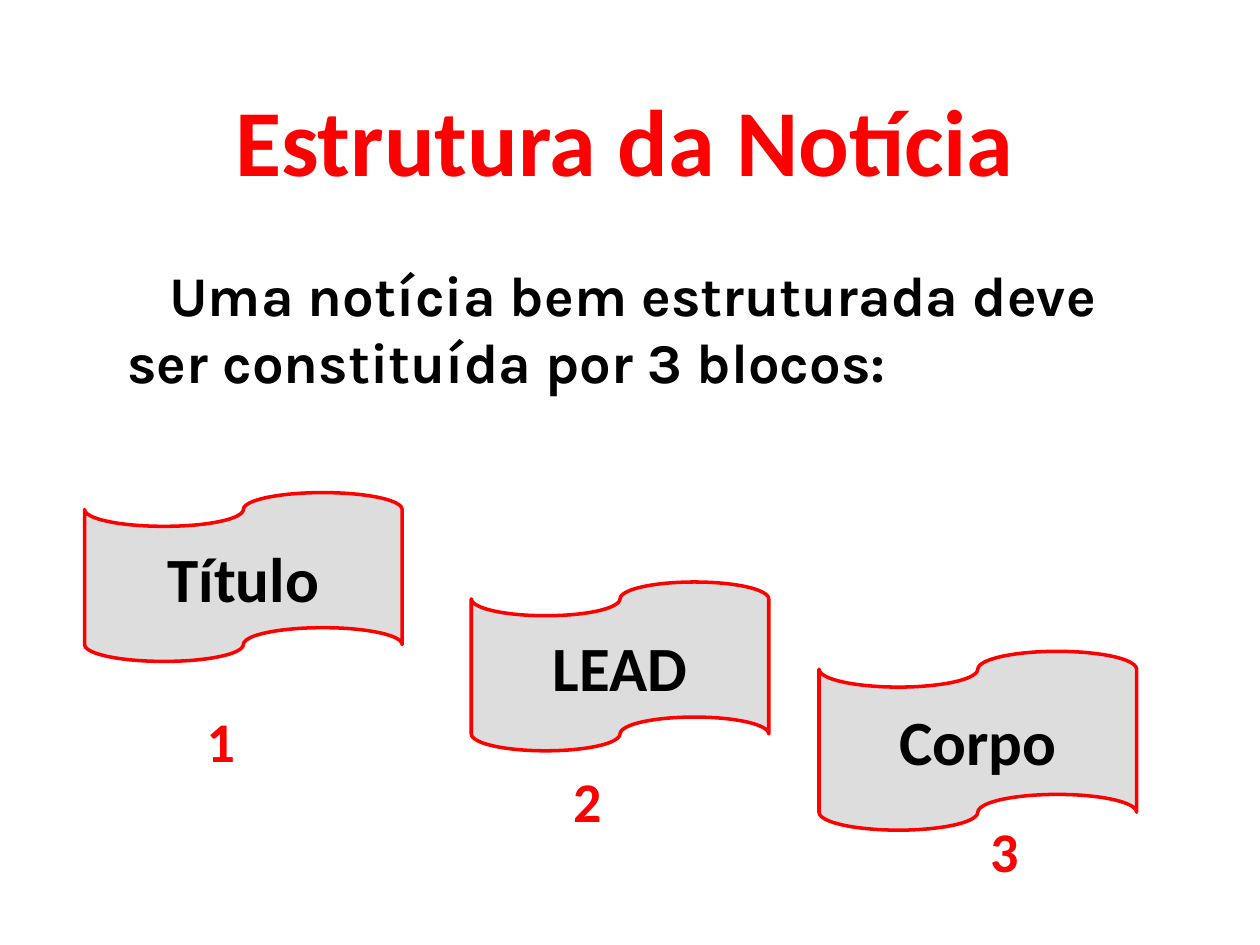
from pptx import Presentation
from pptx.dml.color import RGBColor
from pptx.enum.shapes import MSO_SHAPE
from pptx.enum.text import MSO_ANCHOR, MSO_AUTO_SIZE, PP_ALIGN
from pptx.util import Pt
from lxml import etree

TAPE = MSO_SHAPE.FLOWCHART_PUNCHED_TAPE
TOP, MIDDLE = MSO_ANCHOR.TOP, MSO_ANCHOR.MIDDLE
LEFT, CENTER = PP_ALIGN.LEFT, PP_ALIGN.CENTER
NO_FIT = MSO_AUTO_SIZE.NONE

RED, BLACK, GREY = "FF0000", "000000", "DDDDDD"
DRAWING = "{http://schemas.openxmlformats.org/drawingml/2006/main}"

# Each block: name, tape place (left, top, width, height), number place
BLOCKS = [
    ("Título", (48.3, 281.5, 181.5, 96.5), (111, 400.3, 39.6, 46)),
    ("LEAD", (269.3, 332.6, 170, 96.5), (320.4, 434.2, 39.6, 46)),
    ("Corpo", (468, 372.2, 181.5, 102.2), (558.7, 463, 51.1, 46)),
]


def color(value):
    return RGBColor.from_string(value)


def place(box, left, top, width, height):
    box.left, box.top = Pt(left), Pt(top)
    box.width, box.height = Pt(width), Pt(height)


def write(box, text, size, ink, align=LEFT, anchor=TOP, font="Calibri"):
    frame = box.text_frame
    frame.word_wrap = True
    frame.auto_size = NO_FIT
    frame.vertical_anchor = anchor
    para = frame.paragraphs[0]
    para.text = text
    para.alignment = align
    para.space_before = Pt(0)
    para.font.name = font
    para.font.size = Pt(size)
    para.font.bold = True
    para.font.color.rgb = color(ink)
    return para


def indent_first_line(para, indent):
    """Turn a bulleted paragraph into plain text with a first-line indent."""
    properties = para._p.get_or_add_pPr()
    properties.set("marL", "0")
    properties.set("indent", str(Pt(indent)))
    bullet = etree.Element(DRAWING + "buNone")
    properties.find(DRAWING + "spcBef").addnext(bullet)


def add_tape(page, name, area):
    tape = page.shapes.add_shape(TAPE, *map(Pt, area))
    tape.shadow.inherit = False
    tape.fill.solid()
    tape.fill.fore_color.rgb = color(GREY)
    tape.line.color.rgb = color(RED)
    tape.line.width = Pt(2)
    write(tape, name, 36, BLACK, CENTER, MIDDLE)


def add_number(page, number, area):
    box = page.shapes.add_textbox(*map(Pt, area))
    write(box, str(number), 32, RED)


def main():
    deck = Presentation()
    deck.slide_width, deck.slide_height = Pt(720), Pt(540)
    page = deck.slides.add_slide(deck.slide_layouts[1])

    # Title and introduction
    title, body = page.placeholders
    place(title, 48.2, 43.2, 617.8, 72.7)
    write(title, "Estrutura da Notícia", 54, RED, CENTER)
    place(body, 65.5, 145.4, 583.9, 106.6)
    para = write(body, "Uma notícia bem estruturada deve ser constituída por 3 blocos:",
                 32, BLACK, font="Karla")
    indent_first_line(para, 24)

    # Three blocks stepping down, each with its number below
    for number, (name, tape_area, number_area) in enumerate(BLOCKS, start=1):
        add_tape(page, name, tape_area)
        add_number(page, number, number_area)

    deck.save("out.pptx")


if __name__ == "__main__":
    main()
